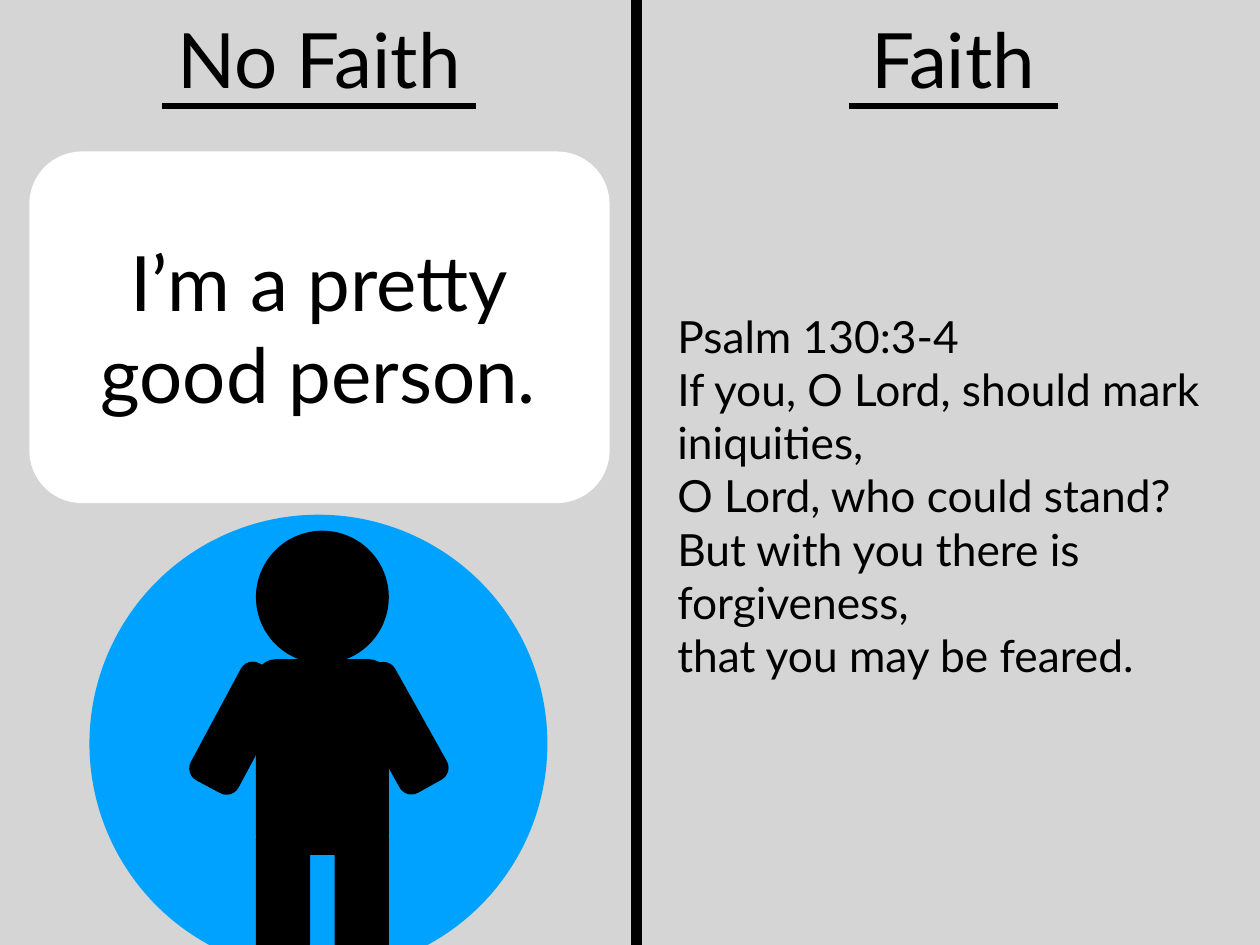
from lxml import etree
from pptx import Presentation
from pptx import util as u
from pptx.dml.color import RGBColor
from pptx.enum import shapes, text
from pptx.oxml.ns import qn

BLACK = RGBColor(0x00, 0x00, 0x00)
WHITE = RGBColor(0xFF, 0xFF, 0xFF)
GREY = RGBColor(0xD5, 0xD5, 0xD5)
BLUE = RGBColor(0x00, 0xA2, 0xFF)

RECTANGLE = shapes.MSO_SHAPE.RECTANGLE
OVAL = shapes.MSO_SHAPE.OVAL
ROUNDED = shapes.MSO_SHAPE.ROUNDED_RECTANGLE

COLUMN_WIDTH = 456.5
VERSE = [
    "Psalm 130:3-4",
    "If you, O Lord, should mark iniquities,",
    "O Lord, who could stand?",
    "But with you there is forgiveness,",
    "that you may be feared.",
]


class Painter:
    font = "Lato"
    title_size = 62
    inset = 4

    def __init__(self, page):
        self.page = page

    def shape(self, kind, left, top, width, height, colour, corner=None, turn=0):
        """Add a borderless filled shape; corner is the rounding ratio."""
        shape = self.page.shapes.add_shape(
            kind, u.Pt(left), u.Pt(top), u.Pt(width), u.Pt(height))
        shape.shadow.inherit = False
        shape.fill.solid()
        shape.fill.fore_color.rgb = colour
        shape.line.fill.background()
        shape.rotation = turn
        if corner is not None:
            shape.adjustments[0] = corner
        return shape

    def line(self, start_x, start_y, end_x, end_y, weight):
        line = self.page.shapes.add_connector(
            shapes.MSO_CONNECTOR.STRAIGHT,
            u.Pt(start_x), u.Pt(start_y), u.Pt(end_x), u.Pt(end_y))
        line.line.color.rgb = BLACK
        line.line.width = u.Pt(weight)
        etree.SubElement(line._element.spPr, qn("a:effectLst"))

    def text(self, left, top, width, height, lines, size, align):
        box = self.page.shapes.add_textbox(
            u.Pt(left), u.Pt(top), u.Pt(width), u.Pt(height))
        frame = box.text_frame
        frame.word_wrap = True
        frame.vertical_anchor = text.MSO_ANCHOR.MIDDLE
        frame.margin_left = frame.margin_right = u.Pt(self.inset)
        frame.margin_top = frame.margin_bottom = u.Pt(self.inset)
        for index, words in enumerate(lines):
            para = frame.add_paragraph() if index else frame.paragraphs[0]
            para.alignment = align
            span = para.add_run()
            span.text = words
            span.font.name = self.font
            span.font.size = u.Pt(size)
            span.font.color.rgb = BLACK

    def heading(self, left, words, rule_start, rule_end):
        """Add a column title with a rule under it."""
        self.text(left, 0.7, COLUMN_WIDTH, 92.2, [words],
                  self.title_size, text.PP_ALIGN.CENTER)
        self.line(rule_start, 86.4, rule_end, 86.4, 5)

    def person(self):
        left, width, limb_width, limb_height = 208, 108, 44, 108
        parts = [
            self.shape(OVAL, left, 431.3, width, width, BLACK),
            self.shape(ROUNDED, left, 535.7, width, 159, BLACK, 0.15),
        ]
        limbs = [
            (left, 670.3, 0),
            (left + width - limb_width, 670.3, 0),
            (172.8, 537.8, 28.2),
            (301, 537.8, 330.8),
        ]
        for x, y, turn in limbs:
            parts.append(self.shape(ROUNDED, x, y, limb_width, limb_height,
                                    BLACK, 0.25, turn))
        self.page.shapes.add_group_shape(parts)


def main():
    deck = Presentation()
    deck.slide_width, deck.slide_height = u.Pt(1024), u.Pt(768)
    painter = Painter(deck.slides.add_slide(deck.slide_layouts[6]))

    painter.shape(RECTANGLE, 0, -2, 1024, 772, GREY)
    painter.shape(OVAL, 72.7, 418.3, 372.2, 372.2, BLUE)
    painter.person()
    painter.line(517, 776, 517, -8.6, 9)

    painter.shape(ROUNDED, 23.8, 123.1, 471.6, 285.8, WHITE, 0.15)
    painter.text(41, 177.8, 435.6, 175.7, ["I’m a pretty good person."],
                 painter.title_size, text.PP_ALIGN.CENTER)
    painter.heading(31, "No Faith", 131.8, 386.6)

    painter.text(546.5, 202.3, COLUMN_WIDTH, 400.3, VERSE, 36,
                 text.PP_ALIGN.LEFT)
    painter.heading(546.5, "Faith", 689.8, 859.7)

    deck.save("out.pptx")


if __name__ == "__main__":
    main()
